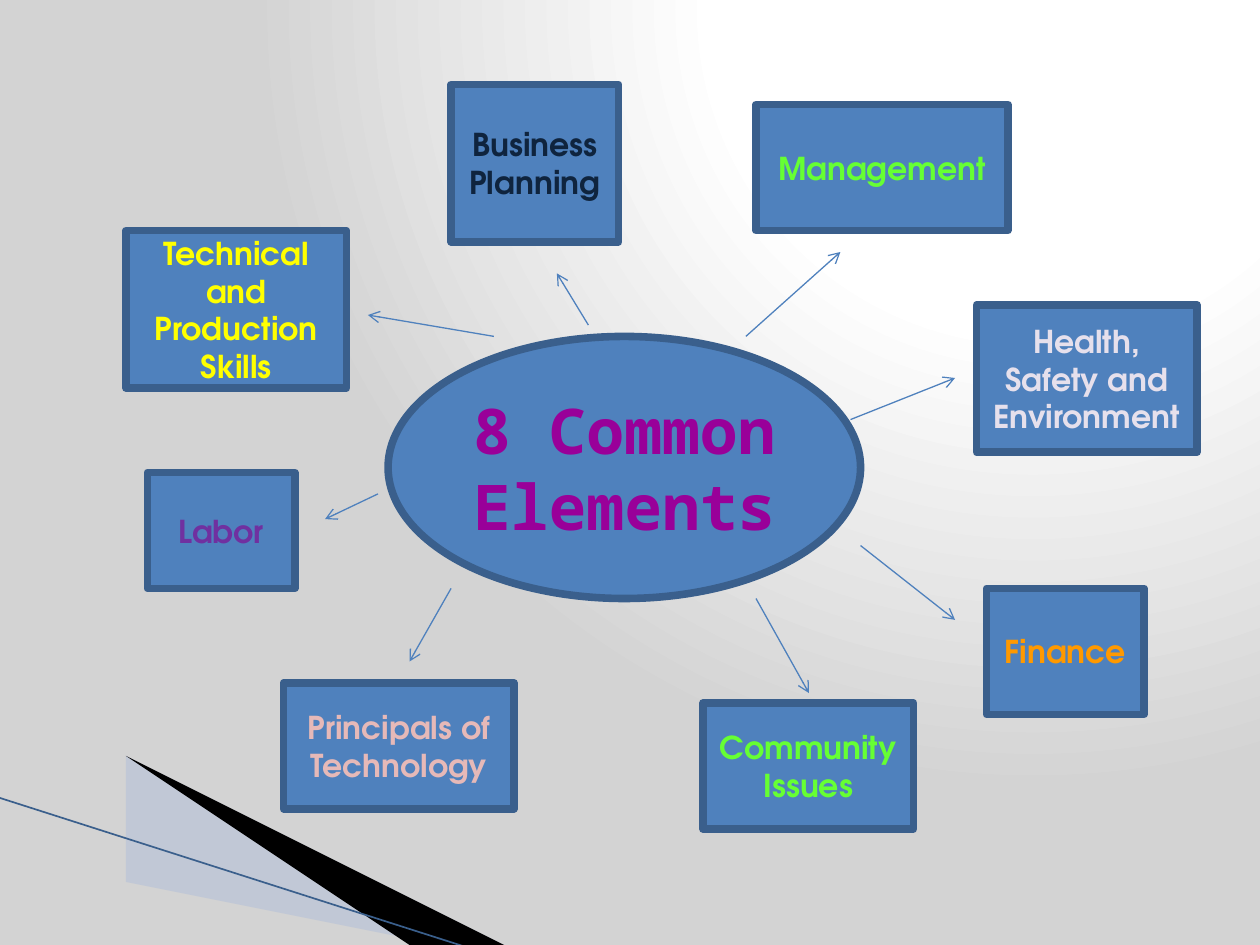
from lxml import etree
from pptx import Presentation
from pptx import util as u
from pptx.dml.color import RGBColor
from pptx.enum import shapes, text
from pptx.oxml import parse_xml
from pptx.oxml.ns import nsdecls, qn

FILL, EDGE = "4F81BD", "3A5F8C"
HUB = ("8 Common Elements", 3.08, 2.67, 3.75, 2.08)

# Label, text colour, left, top, width, height, arrow start, arrow end
ELEMENTS = [
    ("Management", "66FF33", 6, 0.83, 2, 1, (5.92, 2.67), (6.67, 2)),
    ("Business Planning", "0F243E", 3.58, 0.67, 1.33, 1.25, (4.67, 2.58), (4.42, 2.17)),
    ("Technical and Production Skills", "FFFF00", 1, 1.83, 1.75, 1.25, (3.92, 2.67), (2.92, 2.5)),
    ("Labor", "7030A0", 1.17, 3.75, 1.17, 0.92, (3, 3.92), (2.58, 4.12)),
    ("Principals of Technology", "E6B9B8", 2.25, 5.42, 1.83, 1, (3.58, 4.67), (3.25, 5.25)),
    ("Community Issues", "66FF33", 5.58, 5.58, 1.67, 1, (6, 4.75), (6.42, 5.5)),
    ("Finance", "FF9900", 7.83, 4.67, 1.25, 1, (6.83, 4.33), (7.58, 4.92)),
    ("Health, Safety and Environment", "E6E0EC", 7.75, 2.42, 1.75, 1.17, (6.75, 3.33), (7.58, 3)),
]

# Corner wedges: points, colour, opacity in percent
WEDGES = [
    ([(0.55, 6.51), (5.95, 7.51), (4.56, 7.51), (0.55, 6.5)], "A7B9DB", 40),
    ([(0.53, 6.49), (4.57, 7.51), (3.72, 7.52), (0.54, 6.5)], "000000", 100),
]
GRADIENT = [(0, "FFFFFF"), (40, "FFFFFF"), (100, "D3D3D3")]


def rgb(value):
    return RGBColor.from_string(value)


def add_text(sp, content, font="TeX Gyre Adventor", size=18, color="FFFFFF"):
    tf = sp.text_frame
    tf.word_wrap = True
    tf.vertical_anchor = text.MSO_ANCHOR.MIDDLE
    p = tf.paragraphs[0]
    p.alignment = text.PP_ALIGN.CENTER
    r = p.add_run()
    r.text = content
    r.font.name, r.font.size, r.font.bold = font, u.Pt(size), True
    r.font.color.rgb = rgb(color)


def add_node(s, kind, box):
    sp = s.shapes.add_shape(kind, *map(u.Inches, box))
    sp.shadow.inherit = False
    sp.fill.solid()
    sp.fill.fore_color.rgb = rgb(FILL)
    sp.line.color.rgb = rgb(EDGE)
    sp.line.width = u.Pt(4.33)
    return sp


def add_line(s, start, end, color, width, arrow=False):
    line = s.shapes.add_connector(
        shapes.MSO_CONNECTOR.STRAIGHT, *map(u.Inches, (*start, *end)))
    line.line.color.rgb = rgb(color)
    line.line.width = u.Pt(width)
    if arrow:
        etree.SubElement(line.line._get_or_add_ln(), qn("a:tailEnd"), type="arrow")
    etree.SubElement(line._element.spPr, qn("a:effectLst"))


def add_wedge(s, points, color, opacity):
    builder = s.shapes.build_freeform(*points[0], scale=u.Inches(1))
    builder.add_line_segments(points[1:], close=True)
    sp = builder.convert_to_shape()
    sp.shadow.inherit = False
    sp.line.fill.background()
    sp.fill.solid()
    sp.fill.fore_color.rgb = rgb(color)
    if opacity < 100:
        clr = sp._element.spPr.find(".//" + qn("a:srgbClr"))
        etree.SubElement(clr, qn("a:alpha"), val=str(opacity * 1000))


def set_background(s):
    s.background.fill.solid()
    bg = s.element.find(".//" + qn("p:bgPr"))
    stops = "".join(f'<a:gs pos="{pos * 1000}"><a:srgbClr val="{c}"/></a:gs>'
                    for pos, c in GRADIENT)
    bg.replace(bg[0], parse_xml(
        f'<a:gradFill {nsdecls("a")} rotWithShape="1"><a:gsLst>{stops}</a:gsLst>'
        '<a:path path="circle"><a:fillToRect l="65000" b="98000"/></a:path></a:gradFill>'))


def main():
    prs = Presentation()
    prs.slide_width, prs.slide_height = u.Inches(10), u.Inches(7.5)
    s = prs.slides.add_slide(prs.slide_layouts[6])

    # Background and corner decoration
    set_background(s)
    for wedge in WEDGES:
        add_wedge(s, *wedge)
    add_line(s, (-0.01, 6.33), (3.71, 7.52), EDGE, 0.95)

    # Central ellipse
    title, *box = HUB
    hub = add_node(s, shapes.MSO_SHAPE.OVAL, box)
    add_text(hub, title, font="Noto Sans Mono", size=36, color="990099")

    # Elements around it, each with its arrow
    for label, color, *box, start, end in ELEMENTS:
        add_text(add_node(s, shapes.MSO_SHAPE.RECTANGLE, box), label, color=color)
        add_line(s, start, end, FILL, 0.75, arrow=True)

    prs.save("out.pptx")


if __name__ == "__main__":
    main()
